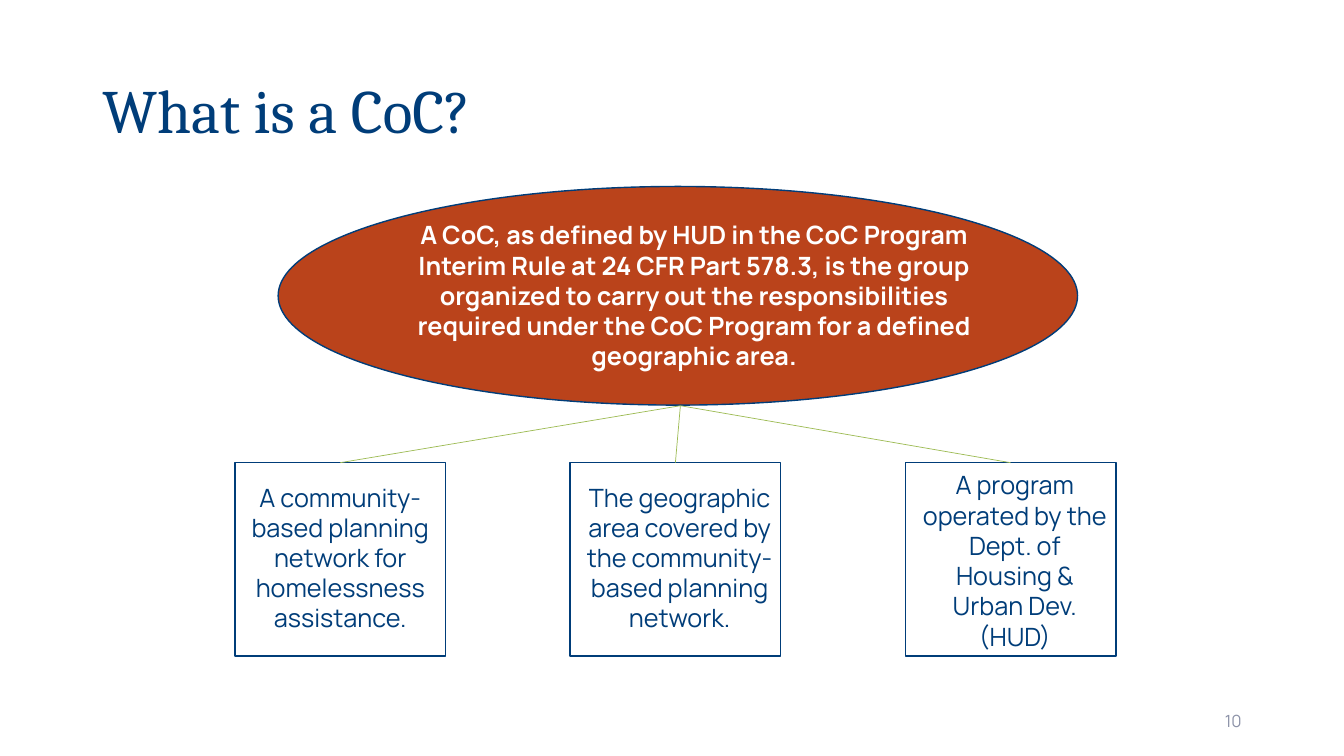
import pptx
import pptx.dml.color
import pptx.enum.shapes
import pptx.enum.text
import pptx.oxml.ns
import pptx.util
import lxml.etree

Pt = pptx.util.Pt
RGB = pptx.dml.color.RGBColor
ALIGN = pptx.enum.text.PP_ALIGN
ANCHOR = pptx.enum.text.MSO_ANCHOR
SHAPE = pptx.enum.shapes.MSO_SHAPE


class Theme:
    navy = RGB.from_string("003D79")
    rust = RGB.from_string("BA431B")
    green = RGB.from_string("9DBB53")
    grey = RGB.from_string("8C92A8")
    white = RGB.from_string("FFFFFF")
    heading_font, body_font = "Cambria", "Manrope"
    title_size, body_size, number_size = Pt(44), Pt(18), Pt(12)
    outline, link = Pt(1), Pt(0.5)


deck = pptx.Presentation()
deck.slide_width, deck.slide_height = Pt(960), Pt(540)
slide = deck.slides.add_slide(deck.slide_layouts[6])


def add_text(text, left, top, width, height, size, color, align=ALIGN.CENTER,
             anchor=ANCHOR.TOP, font=Theme.body_font, bold=False):
    box = slide.shapes.add_textbox(Pt(left), Pt(top), Pt(width), Pt(height))
    frame = box.text_frame
    frame.word_wrap = True
    frame.vertical_anchor = anchor
    frame.text = text
    for paragraph in frame.paragraphs:
        paragraph.alignment = align
        for run in paragraph.runs:
            run.font.name, run.font.size = font, size
            run.font.bold, run.font.color.rgb = bold, color
    return frame


def add_outlined(kind, left, top, width, height):
    shape = slide.shapes.add_shape(kind, Pt(left), Pt(top), Pt(width), Pt(height))
    shape.shadow.inherit = False
    shape.fill.background()
    shape.line.color.rgb, shape.line.width = Theme.navy, Theme.outline
    return shape


# Title
title = add_text("What is a CoC?", 66, 29, 828, 104.4, Theme.title_size, Theme.navy,
                 ALIGN.LEFT, ANCHOR.MIDDLE, Theme.heading_font)
title.paragraphs[0].line_spacing = 0.9

# Definition
definition = add_outlined(SHAPE.OVAL, 198.7, 133.2, 571, 156.2)
definition.fill.solid()
definition.fill.fore_color.rgb = Theme.rust
add_text("A CoC, as defined by HUD in the CoC Program Interim Rule at 24 CFR Part 578.3, "
         "is the group organized to carry out the responsibilities required under the "
         "CoC Program for a defined geographic area.",
         279.4, 153.4, 432.7, 116.6, Theme.body_size, Theme.white, bold=True)

# Three meanings, each linked to the definition: text, text shift, text top
meanings = [
    ("A community-based planning network for homelessness assistance.", 0, 340.6),
    ("The geographic area covered by the community-based planning network.", 3, 340.6),
    ("A program operated by the Dept. of Housing & Urban Dev.\n(HUD)", 3, 331.9),
]
box_width, box_pitch = 150.5, 239.4
for index, (meaning, shift, text_top) in enumerate(meanings):
    left = 167.8 + index * box_pitch
    meaning_box = add_outlined(SHAPE.RECTANGLE, left, 330.5, box_width, 138.2)
    add_text(meaning, left + shift, text_top, box_width, 116.6,
             Theme.body_size, Theme.navy)
    link = slide.shapes.add_connector(pptx.enum.shapes.MSO_CONNECTOR.STRAIGHT,
                                      Pt(486), Pt(289.8), Pt(486), Pt(330.5))
    link.end_connect(meaning_box, 0)
    link.line.color.rgb, link.line.width = Theme.green, Theme.link
    lxml.etree.SubElement(link._element.spPr, pptx.oxml.ns.qn("a:effectLst"))

# Slide number
add_text("10", 678, 500.5, 216, 28.8, Theme.number_size, Theme.grey,
         ALIGN.RIGHT, ANCHOR.MIDDLE)

deck.save("out.pptx")
